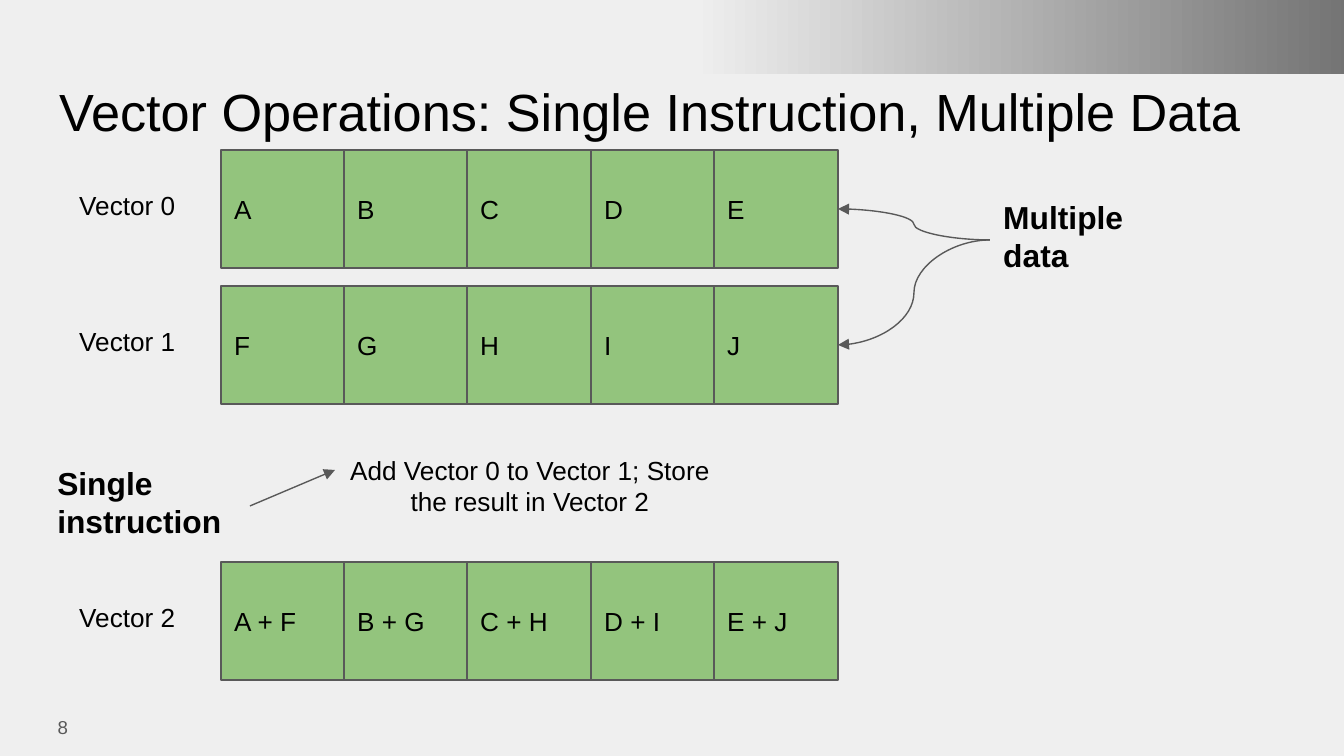
import pptx
import pptx.dml.color
import pptx.enum.dml
import pptx.enum.shapes
import pptx.enum.text
import pptx.oxml
import pptx.oxml.ns
import pptx.util

ALIGN = pptx.enum.text.PP_ALIGN
ANCHOR = pptx.enum.text.MSO_ANCHOR
CONNECTOR = pptx.enum.shapes.MSO_CONNECTOR
PX_PER_INCH = 134.4
TOP, LEFT, BOTTOM, RIGHT = range(4)


def px(length):
    """Turn pixels into EMU."""
    return pptx.util.Inches(length / PX_PER_INCH)


def color(value):
    """Turn a hex string into a colour."""
    return pptx.dml.color.RGBColor.from_string(value)


def write_text(shape, text, size=14, fill="000000", bold=False,
               align=ALIGN.LEFT, anchor=ANCHOR.TOP, font="Arial"):
    """Fill a shape's text frame with one formatted paragraph."""
    frame = shape.text_frame
    frame.word_wrap = True
    frame.vertical_anchor = anchor
    frame.margin_left = frame.margin_right = pptx.util.Inches(0.1)
    frame.margin_top = frame.margin_bottom = pptx.util.Inches(0.1)
    paragraph = frame.paragraphs[0]
    paragraph.alignment = align
    run = paragraph.add_run()
    run.text = text
    run.font.name = font
    run.font.size = pptx.util.Pt(size)
    run.font.bold = bold
    run.font.color.rgb = color(fill)


class VectorSlide:
    """Hold the style and the current slide."""

    background = "EFEFEF"
    band_end = "737373"
    cell_fill = "93C47D"
    line_color = "595959"
    line_width = pptx.util.Pt(0.75)

    def __init__(self, presentation):
        """Add a blank slide with a plain background."""
        self.slide = presentation.slides.add_slide(presentation.slide_layouts[6])
        fill = self.slide.background.fill
        fill.solid()
        fill.fore_color.rgb = color(self.background)

    def rectangle(self, left, top, width, height):
        """Add a rectangle without a shadow."""
        shape = self.slide.shapes.add_shape(
            pptx.enum.shapes.MSO_SHAPE.RECTANGLE,
            px(left), px(top), px(width), px(height))
        shape.shadow.inherit = False
        return shape

    def band(self, left, top, width, height):
        """Add the horizontal gradient band."""
        shape = self.rectangle(left, top, width, height)
        shape.line.fill.background()
        shape.fill.gradient()
        shape.fill.gradient_angle = 0
        stops = zip(shape.fill.gradient_stops, (self.background, self.band_end), (0, 1))
        for stop, value, position in stops:
            stop.color.rgb = color(value)
            stop.position = position

    def cell(self, text, left, top, width, height):
        """Add one vector element."""
        shape = self.rectangle(left, top, width, height)
        shape.fill.solid()
        shape.fill.fore_color.rgb = color(self.cell_fill)
        shape.line.color.rgb = color(self.line_color)
        shape.line.width = self.line_width
        write_text(shape, text, anchor=ANCHOR.MIDDLE)
        return shape

    def vector(self, texts, left, top, width, height):
        """Add a row of adjoining cells and return the last one."""
        edges = [left + width * i // len(texts) for i in range(len(texts) + 1)]
        cells = [self.cell(text, start, top, end - start, height)
                 for text, start, end in zip(texts, edges, edges[1:])]
        return cells[-1]

    def label(self, text, left, top, width, height, **style):
        """Add a text box."""
        shape = self.slide.shapes.add_textbox(px(left), px(top), px(width), px(height))
        write_text(shape, text, **style)
        return shape

    def arrow(self, kind, source, source_side, target, target_side):
        """Join two shapes with an arrow."""
        connector = self.slide.shapes.add_connector(kind, 0, 0, 0, 0)
        connector.begin_connect(source, source_side)
        connector.end_connect(target, target_side)
        connector.line.color.rgb = color(self.line_color)
        connector.line.width = self.line_width
        tail = pptx.oxml.parse_xml(
            f'<a:tailEnd {pptx.oxml.ns.nsdecls("a")} type="triangle"/>')
        connector.line._get_or_add_ln().append(tail)
        effects = pptx.oxml.parse_xml(f'<a:effectLst {pptx.oxml.ns.nsdecls("a")}/>')
        connector._element.spPr.append(effects)


def main():
    """Build and save the slide."""
    presentation = pptx.Presentation()
    presentation.slide_width = px(1344)
    presentation.slide_height = px(756)
    page = VectorSlide(presentation)

    page.band(692, -8, 660, 82)
    page.label("Vector Operations: Single Instruction, Multiple Data",
               46, 66, 1253, 85, size=28)
    page.label("8", 0, 698, 81, 58, size=10, fill="595959",
               align=ALIGN.RIGHT, anchor=ANCHOR.MIDDLE)

    first, second = "ABCDE", "FGHIJ"
    sums = [f"{a} + {b}" for a, b in zip(first, second)]
    last_cells = []
    for index, (texts, top) in enumerate(zip((first, second, sums), (150, 286, 562))):
        last_cells.append(page.vector(texts, 221, top, 617, 118))
        page.label(f"Vector {index}", 66, top + 26, 141, 63)

    instruction = page.label("Add Vector 0 to Vector 1; Store the result in Vector 2",
                             335, 441, 390, 58, align=ALIGN.CENTER)
    single = page.label("Single instruction", 44, 450, 206, 112, size=17, bold=True)
    multiple = page.label("Multiple data", 990, 184, 206, 112, size=17, bold=True)

    page.arrow(CONNECTOR.STRAIGHT, single, RIGHT, instruction, LEFT)
    for cell in last_cells[:2]:
        page.arrow(CONNECTOR.CURVE, multiple, LEFT, cell, RIGHT)

    presentation.save("out.pptx")


if __name__ == "__main__":
    main()
